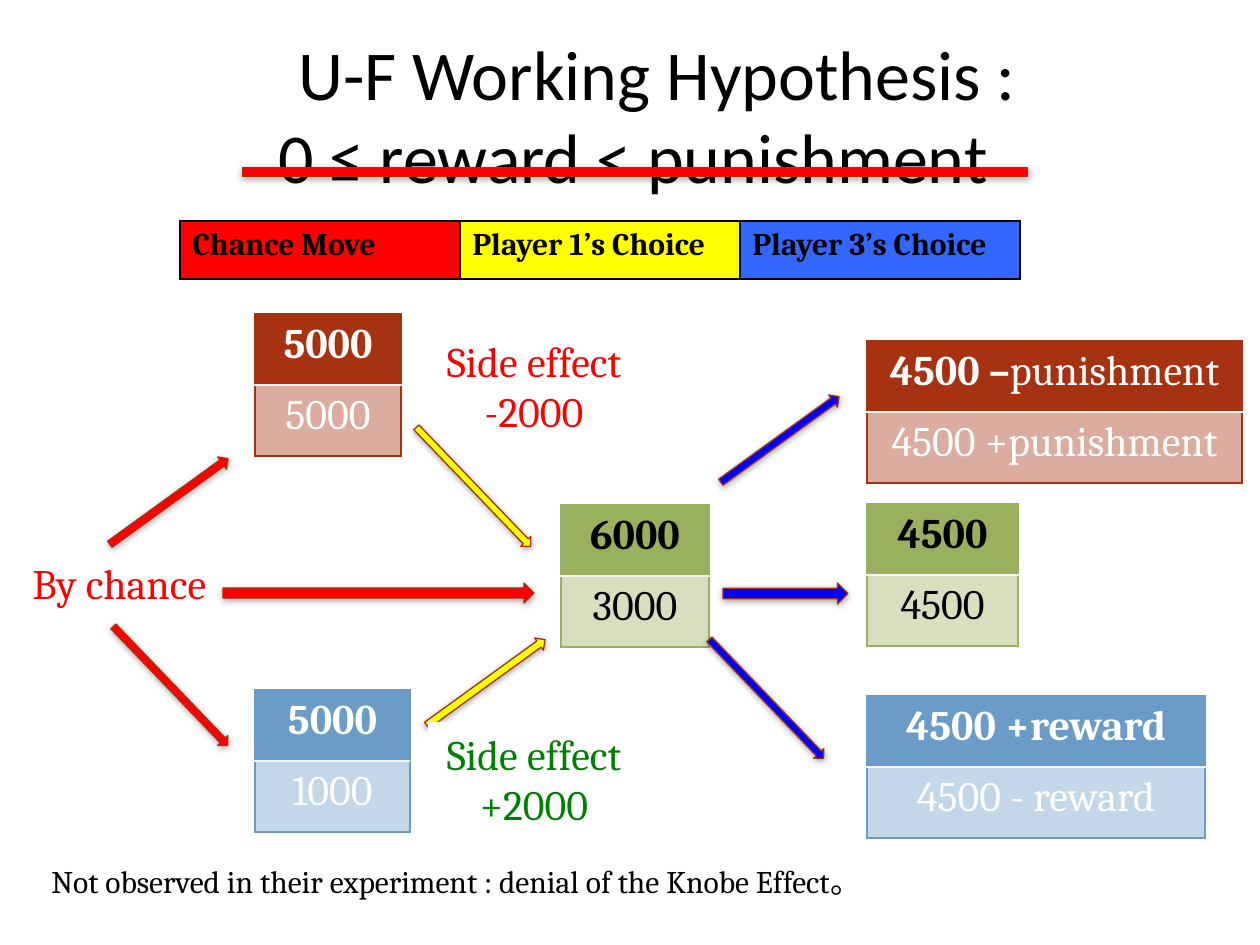
from lxml.etree import SubElement
from pptx import Presentation
from pptx.dml.color import RGBColor
from pptx.enum.shapes import MSO_SHAPE
from pptx.enum.text import MSO_ANCHOR, MSO_AUTO_SIZE, PP_ALIGN
from pptx.oxml import parse_xml
from pptx.oxml.ns import nsdecls, qn
from pptx.util import Emu, Inches, Pt

BLACK, WHITE, RED, YELLOW, BLUE = "000000", "FFFFFF", "FF0000", "FFFF00", "0000FF"
BRICK, OLIVE, SKY, PALE = "A63212", "9BB05E", "6B9BC7", "F4F4F4"
RISING, LEVEL, FALLING = 324.1, 0, 46.2


def px(length):
    return Emu(round(length * 914400 / 126))


def place(box):
    return [px(length) for length in box]


def rgb(color):
    return RGBColor.from_string(color)


def write(frame, text, size=24, color=BLACK, bold=False, align=PP_ALIGN.LEFT,
          font="Cambria", plain_tail=""):
    for number, line in enumerate(text.split("\n")):
        paragraph = frame.add_paragraph() if number else frame.paragraphs[0]
        paragraph.alignment = align
        for words, weight in ((line, bold), (plain_tail, False)):
            if words:
                run = paragraph.add_run()
                run.text = words
                run.font.name = font
                run.font.size = Pt(size)
                run.font.bold = weight
                run.font.color.rgb = rgb(color)


def fill_cell(cell, color, borders, opacity=100):
    cell.fill.solid()
    cell.fill.fore_color.rgb = rgb(color)
    properties = cell._tc.get_or_add_tcPr()
    if opacity < 100:
        tint = properties.find(qn("a:solidFill"))[0]
        SubElement(tint, qn("a:alpha"), val=str(opacity * 1000))
    for index, side in enumerate("LRTB"):
        line_color, width = borders[side]
        properties.insert(index, parse_xml(
            f'<a:ln{side} {nsdecls("a")} w="{Pt(width)}"><a:solidFill>'
            f'<a:srgbClr val="{line_color}"/></a:solidFill></a:ln{side}>'))


def add_grid(slide, box, rows, columns):
    grid = slide.shapes.add_table(rows, columns, *place(box)).table
    for row in grid.rows:
        row.height = px(box[3] / rows)
    for column in grid.columns:
        column.width = px(box[2] / columns)
    return grid


def add_title(slide, box, lines):
    title = slide.shapes.title
    title.left, title.top, title.width, title.height = place(box)
    frame = title.text_frame
    frame.auto_size = MSO_AUTO_SIZE.NONE
    frame.vertical_anchor = MSO_ANCHOR.MIDDLE
    write(frame, "\n".join(line for line, indent in lines), size=40,
          align=PP_ALIGN.CENTER, font="Calibri")
    for paragraph, (line, indent) in zip(frame.paragraphs, lines):
        paragraph.space_before = Pt(0)
        paragraph._p.get_or_add_pPr().set("marL", str(px(indent)))


def add_move_header(slide, box, moves):
    grid = add_grid(slide, box, 1, len(moves))
    borders = dict.fromkeys("LRTB", (BLACK, 1))
    for cell, (move, color) in zip(grid.rows[0].cells, moves):
        fill_cell(cell, color, borders)
        write(cell.text_frame, move, size=18, bold=True)


def add_payoffs(slide, box, color, first, second, plain_tail=""):
    grid = add_grid(slide, box, 2, 1)
    ink = BLACK if color == OLIVE else WHITE
    outline = dict.fromkeys("LRTB", (color, 0.75))
    divider = (PALE, 1.5)
    top, bottom = grid.cell(0, 0), grid.cell(1, 0)
    fill_cell(top, color, {**outline, "B": divider})
    fill_cell(bottom, color, {**outline, "T": divider}, opacity=40)
    write(top.text_frame, first, color=ink, bold=True, align=PP_ALIGN.CENTER,
          plain_tail=plain_tail)
    write(bottom.text_frame, second, color=ink, align=PP_ALIGN.CENTER)


def add_mark(slide, box, color, angle=LEVEL, kind=MSO_SHAPE.RIGHT_ARROW):
    mark = slide.shapes.add_shape(kind, *place(box))
    mark.rotation = angle
    mark.fill.solid()
    mark.fill.fore_color.rgb = rgb(color)
    mark.line.color.rgb = rgb(BRICK)
    mark.line.width = Pt(0.75)
    mark.shadow.inherit = False
    mark._element.spPr.find(qn("a:effectLst")).append(parse_xml(
        f'<a:outerShdw {nsdecls("a")} blurRad="{Pt(4)}" dist="{Pt(1)}" dir="5400000" '
        'rotWithShape="0"><a:srgbClr val="000000"><a:alpha val="37000"/>'
        '</a:srgbClr></a:outerShdw>'))


def add_label(slide, box, text, fill=None, **style):
    label = slide.shapes.add_textbox(*place(box))
    if fill:
        label.fill.solid()
        label.fill.fore_color.rgb = rgb(fill)
    label.text_frame.word_wrap = False
    label.text_frame.auto_size = MSO_AUTO_SIZE.SHAPE_TO_FIT_TEXT
    write(label.text_frame, text, **style)


def main():
    deck = Presentation()
    deck.slide_width, deck.slide_height = Inches(10), Inches(7.5)
    slide = deck.slides.add_slide(deck.slide_layouts[5])

    add_title(slide, (59, 35, 1134, 158),
              [("U-F Working Hypothesis :", 62), ("0 ≤ reward < punishment", 14)])

    for left, top, width, color, *payoffs in [
        (561, 505, 148, OLIVE, "6000", "3000"),
        (867, 504, 151, OLIVE, "4500", "4500"),
        (255, 314, 146, BRICK, "5000", "5000"),
        (255, 690, 155, SKY, "5000", "1000"),
        (867, 341, 375, BRICK, "4500 –", "4500 +punishment", "punishment"),
        (867, 696, 338, SKY, "4500 +reward", "4500 - reward"),
    ]:
        add_payoffs(slide, (left, top, width, 142), color, *payoffs)

    for box, color, angle in [
        ((96, 494, 146, 15), RED, RISING),
        ((223, 583, 311, 20), RED, LEVEL),
        ((88, 679, 165, 14), RED, FALLING),
        ((391, 480, 165, 14), YELLOW, FALLING),
        ((413, 675, 146, 15), YELLOW, RISING),
        ((707, 432, 146, 15), BLUE, RISING),
        ((723, 583, 125, 21), BLUE, LEVEL),
        ((684, 692, 165, 14), BLUE, FALLING),
    ]:
        add_mark(slide, box, color, angle)

    add_label(slide, (20, 551, 208, 63), "By chance", color=RED)
    add_label(slide, (428, 329, 212, 115), "Side effect\n-2000", color=RED,
              align=PP_ALIGN.CENTER)
    add_label(slide, (428, 722, 212, 115), "Side effect\n+2000", fill=WHITE,
              color="008000", align=PP_ALIGN.CENTER)

    add_move_header(slide, (180, 221, 840, 58),
                    [("Chance Move", RED), ("Player 1’s Choice", YELLOW),
                     ("Player 3’s Choice", "3366FF")])
    add_mark(slide, (101, 152, 1068, 40), RED, kind=MSO_SHAPE.MATH_MINUS)
    add_label(slide, (39, 856, 879, 89),
              "Not observed in their experiment : denial of the Knobe Effect。", size=18)

    deck.save("out.pptx")


if __name__ == "__main__":
    main()
